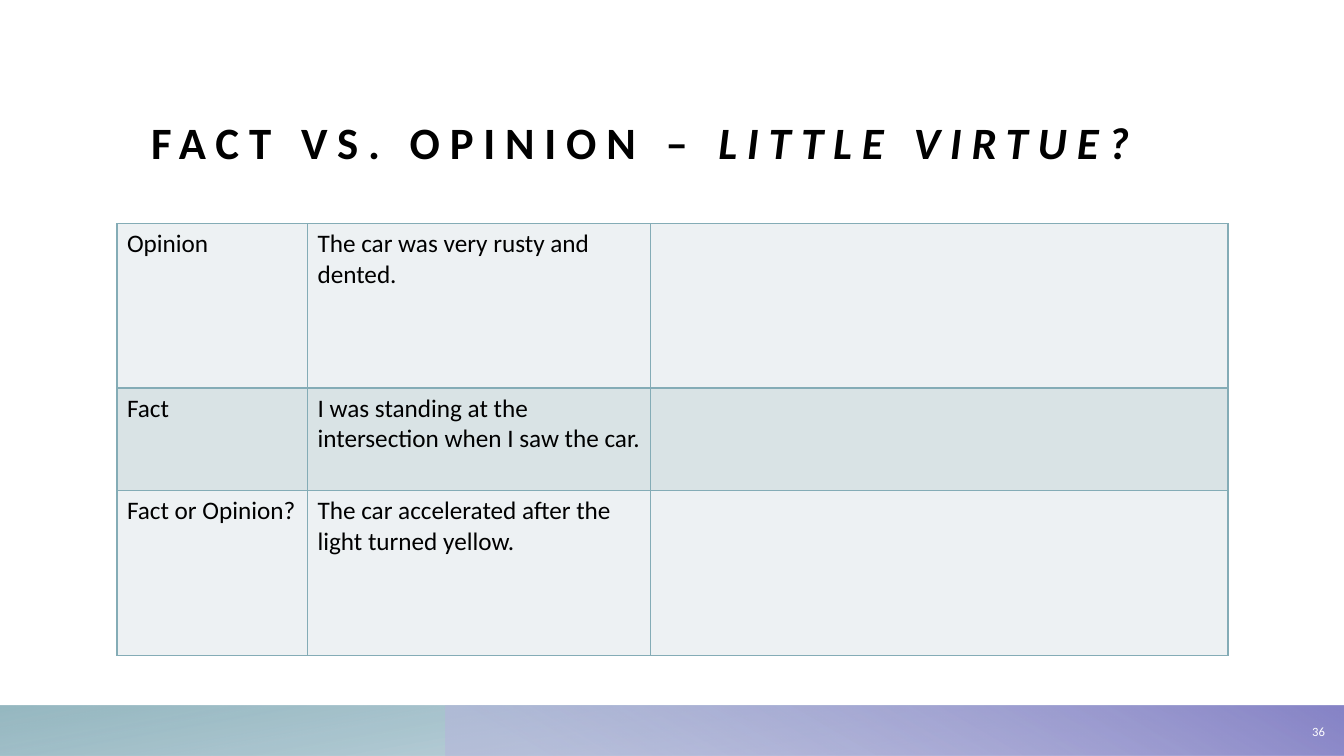
import pptx
import pptx.dml.color
import pptx.enum.shapes
import pptx.enum.text
import pptx.oxml
import pptx.oxml.ns
import pptx.util
from pptx.util import Inches

FONT = "Calibri"
COLORS = {
    "text": "000000",
    "number": "FFFFFF",
    "border": "84ACB6",
    "row_light": "EDF1F3",
    "row_dark": "D9E3E5",
    "teal_start": "6997AF",
    "teal_end": "84ACB6",
    "violet_start": "B7B5DD",
    "violet_end": "8784C7",
}
COLUMN_WIDTHS = [1.89, 3.4, 5.73]
ROW_HEIGHTS = [1.63, 1.02, 1.63]
ROWS = [
    ("Opinion", "The car was very rusty and dented."),
    ("Fact", "I was standing at the intersection when I saw the car."),
    ("Fact or Opinion?", "The car accelerated after the light turned yellow."),
]


def rgb(name):
    return pptx.dml.color.RGBColor.from_string(COLORS[name])


def xml(text):
    head, tail = text.split(">", 1)
    return pptx.oxml.parse_xml(f"{head} {pptx.oxml.ns.nsdecls('a')}>{tail}")


def style(p, size, color):
    p.font.name = FONT
    p.font.size = pptx.util.Pt(size)
    p.font.color.rgb = rgb(color)


def add_bar(s, left, width, stops, angle, rotation=0):
    """Stops are (position %, colour name, opacity %)."""
    sp = s.shapes.add_shape(pptx.enum.shapes.MSO_SHAPE.RECTANGLE,
                            Inches(left), Inches(7), Inches(width), Inches(0.5))
    sp.shadow.inherit = False
    sp.line.fill.background()
    sp.rotation = rotation
    props = sp._element.spPr
    props.xfrm.set("flipH", "1")
    stop_xml = "".join(
        f'<a:gs pos="{pos * 1000}"><a:srgbClr val="{COLORS[name]}">'
        f'<a:alpha val="{opacity * 1000}"/></a:srgbClr></a:gs>'
        for pos, name, opacity in stops)
    props.prstGeom.addnext(xml(
        f'<a:gradFill rotWithShape="1"><a:gsLst>{stop_xml}</a:gsLst>'
        f'<a:lin ang="{angle * 60000}" scaled="0"/></a:gradFill>'))


def add_text_box(s, left, top, width, height, anchor):
    tf = s.shapes.add_textbox(Inches(left), Inches(top),
                              Inches(width), Inches(height)).text_frame
    tf.word_wrap = True
    tf.vertical_anchor = anchor
    return tf


def add_title(s, plain, italic):
    tf = add_text_box(s, 1.5, 0.87, 11.2, 1.35, pptx.enum.text.MSO_ANCHOR.BOTTOM)
    tf.margin_left = tf.margin_right = tf.margin_top = 0
    tf.margin_bottom = Inches(0.57)
    p = tf.paragraphs[0]
    style(p, 32, "text")
    p.font.bold = True
    for text, slanted in ((plain, False), (italic, True)):
        r = p.add_run()
        r.text = text
        r.font.italic = slanted
        r._r.get_or_add_rPr().set("spc", "700")


def add_slide_number(s, number):
    tf = add_text_box(s, 12.76, 7.01, 0.48, 0.49, pptx.enum.text.MSO_ANCHOR.MIDDLE)
    p = tf.paragraphs[0]
    p.text = number
    p.alignment = pptx.enum.text.PP_ALIGN.RIGHT
    style(p, 9, "number")


def set_borders(cell):
    props = cell._tc.get_or_add_tcPr()
    for i, side in enumerate(("lnL", "lnR", "lnT", "lnB")):
        props.insert(i, xml(
            f'<a:{side} w="12700"><a:solidFill><a:srgbClr val="{COLORS["border"]}"/>'
            f'</a:solidFill></a:{side}>'))


def add_statement_table(s):
    table = s.shapes.add_table(
        len(ROW_HEIGHTS), len(COLUMN_WIDTHS), Inches(1.16), Inches(2.22),
        Inches(sum(COLUMN_WIDTHS)), Inches(sum(ROW_HEIGHTS))).table
    table.first_row = False
    for column, width in zip(table.columns, COLUMN_WIDTHS):
        column.width = Inches(width)
    for i, (row, height) in enumerate(zip(table.rows, ROW_HEIGHTS)):
        row.height = Inches(height)
        for cell in row.cells:
            cell.fill.solid()
            cell.fill.fore_color.rgb = rgb("row_dark" if i % 2 else "row_light")
            set_borders(cell)
        for cell, text in zip(row.cells, ROWS[i]):
            cell.text = text
            style(cell.text_frame.paragraphs[0], 18, "text")


def main():
    prs = pptx.Presentation()
    prs.slide_width, prs.slide_height = Inches(13.33), Inches(7.5)
    s = prs.slides.add_slide(prs.slide_layouts[6])

    # Footer bars
    add_bar(s, 0, 13.33, [(14, "teal_start", 28), (100, "teal_end", 85)], 100, 180)
    add_bar(s, 4.42, 8.91, [(9, "violet_start", 55), (99, "violet_end", 100)], 240)

    # Title, slide number and table
    add_title(s, "FACT VS. OPINION – ", "LITTLE VIRTUE?")
    add_slide_number(s, "36")
    add_statement_table(s)

    prs.save("out.pptx")


if __name__ == "__main__":
    main()
